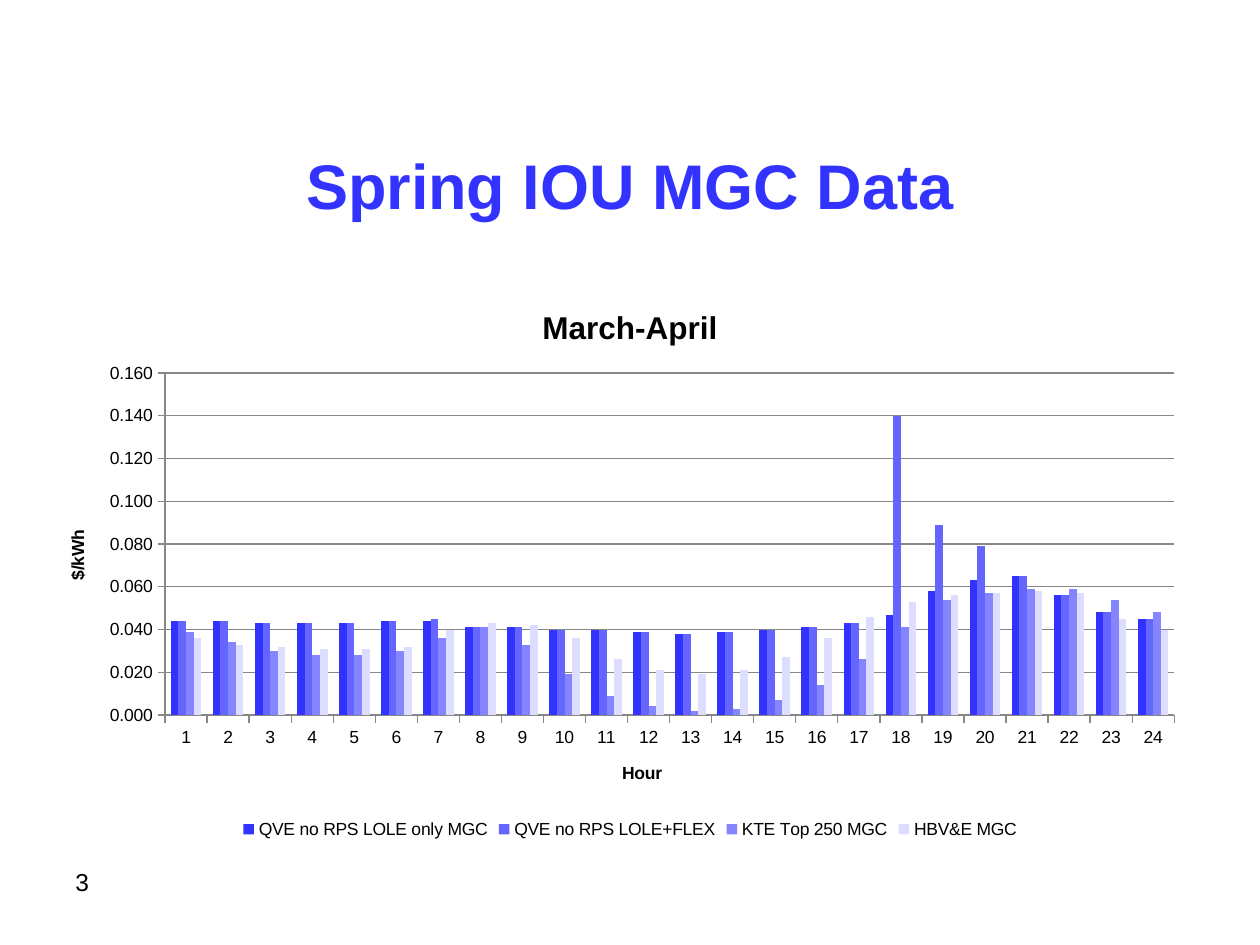
from lxml import etree
from pptx import Presentation
from pptx import util as u
from pptx.chart.data import CategoryChartData
from pptx.dml.color import RGBColor
from pptx.enum import chart as kinds, text
from pptx.oxml import ns

BLUE = RGBColor(0x33, 0x33, 0xFF)
BLACK = RGBColor(0, 0, 0)
GREY = RGBColor(0x87, 0x87, 0x87)
SERIES_COLORS = [BLUE, RGBColor(0x65, 0x65, 0xFF),
                 RGBColor(0x85, 0x85, 0xFF), RGBColor(0xDD, 0xDD, 0xFF)]

# Marginal generation cost in $/kWh for hours 1 to 24
COSTS = {
    "QVE no RPS LOLE only MGC": [
        0.044, 0.044, 0.043, 0.043, 0.043, 0.044, 0.044, 0.041,
        0.041, 0.04, 0.04, 0.039, 0.038, 0.039, 0.04, 0.041,
        0.043, 0.047, 0.058, 0.063, 0.065, 0.056, 0.048, 0.045],
    "QVE no RPS LOLE+FLEX": [
        0.044, 0.044, 0.043, 0.043, 0.043, 0.044, 0.045, 0.041,
        0.041, 0.04, 0.04, 0.039, 0.038, 0.039, 0.04, 0.041,
        0.043, 0.14, 0.089, 0.079, 0.065, 0.056, 0.048, 0.045],
    "KTE Top 250 MGC": [
        0.039, 0.034, 0.03, 0.028, 0.028, 0.03, 0.036, 0.041,
        0.033, 0.019, 0.009, 0.004, 0.002, 0.003, 0.007, 0.014,
        0.026, 0.041, 0.054, 0.057, 0.059, 0.059, 0.054, 0.048],
    "HBV&E MGC": [
        0.036, 0.033, 0.032, 0.031, 0.031, 0.032, 0.04, 0.043,
        0.042, 0.036, 0.026, 0.021, 0.019, 0.021, 0.027, 0.036,
        0.046, 0.053, 0.056, 0.057, 0.058, 0.057, 0.045, 0.04],
}


def write(frame, words, size=10, color=BLACK, bold=False, align=None):
    """Put one formatted paragraph into a text frame."""
    para = frame.paragraphs[0]
    para.alignment = align
    span = para.add_run()
    span.text = words
    font = span.font
    font.name, font.size, font.bold = "Arial", u.Pt(size), bold
    font.color.rgb = color


class SlideBuilder:
    """Places elements on a grid of half-inch columns and quarter-inch rows."""
    column, row = u.Inches(0.5), u.Inches(0.25)

    def __init__(self, deck):
        self.slide = deck.slides.add_slide(deck.slide_layouts[6])

    def place(self, left, top, width, height):
        return (round(left * self.column), round(top * self.row),
                round(width * self.column), round(height * self.row))

    def label(self, words, *grid, anchor=text.MSO_ANCHOR.TOP, **style):
        box = self.slide.shapes.add_textbox(*self.place(*grid))
        frame = box.text_frame
        frame.word_wrap = True
        frame.vertical_anchor = anchor
        write(frame, words, **style)

    def axis(self, axis, title):
        write(axis.axis_title.text_frame, title, bold=True)
        axis.major_tick_mark = kinds.XL_TICK_MARK.OUTSIDE
        axis.minor_tick_mark = kinds.XL_TICK_MARK.NONE
        axis.format.line.color.rgb = GREY

    def column_chart(self, title, data, plot_area, *grid):
        chart = self.slide.shapes.add_chart(
            kinds.XL_CHART_TYPE.COLUMN_CLUSTERED, *self.place(*grid), data).chart
        chart.font.name, chart.font.size = "Arial", u.Pt(10)
        chart.font.color.rgb = BLACK
        chart.has_title = True
        write(chart.chart_title.text_frame, title, size=18, bold=True)
        chart.chart_title.include_in_layout = False
        chart.has_legend = True
        chart.legend.position = kinds.XL_LEGEND_POSITION.BOTTOM
        chart.legend.include_in_layout = False

        # Axes
        self.axis(chart.category_axis, "Hour")
        costs = chart.value_axis
        self.axis(costs, "$/kWh")
        costs.minimum_scale, costs.maximum_scale, costs.major_unit = 0, 0.16, 0.02
        costs.tick_labels.number_format = "0.000"
        costs.tick_labels.number_format_is_linked = False
        costs.major_gridlines.format.line.color.rgb = GREY

        # Columns
        plot = chart.plots[0]
        plot.gap_width, plot.overlap = 150, 0
        plot.vary_by_categories = False
        for series, color in zip(plot.series, SERIES_COLORS):
            series.format.fill.solid()
            series.format.fill.fore_color.rgb = color
        self.fix_plot_area(chart, plot_area)

    def fix_plot_area(self, chart, shares):
        """Set the inner plot area as shares of the chart's size."""
        area = chart.element.find(".//" + ns.qn("c:plotArea"))
        for old in area.findall(ns.qn("c:layout")):
            area.remove(old)
        layout = etree.Element(ns.qn("c:layout"))
        manual = etree.SubElement(layout, ns.qn("c:manualLayout"))
        settings = [("layoutTarget", "inner"), ("xMode", "edge"), ("yMode", "edge"),
                    *zip("xywh", shares)]
        for tag, value in settings:
            etree.SubElement(manual, ns.qn("c:" + tag), val=str(value))
        area.insert(0, layout)


def main():
    deck = Presentation()
    deck.slide_width, deck.slide_height = u.Inches(10), u.Inches(7.5)
    page = SlideBuilder(deck)

    # Title and page number
    page.label("Spring IOU MGC Data", 1, 3.68, 18, 4.32,
               anchor=text.MSO_ANCHOR.MIDDLE, size=36, color=BLUE, bold=True,
               align=text.PP_ALIGN.CENTER)
    page.label("3", 1, 27.32, 3.66, 2.08, size=14)

    # Hourly cost chart
    data = CategoryChartData(number_format="0.000")
    data.categories = [str(hour) for hour in range(1, 25)]
    for name, values in COSTS.items():
        data.add_series(name, values)
    page.column_chart("March-April", data, (0.09, 0.16, 0.89, 0.61),
                      1, 9, 18, 17.8)

    deck.save("out.pptx")


if __name__ == "__main__":
    main()
